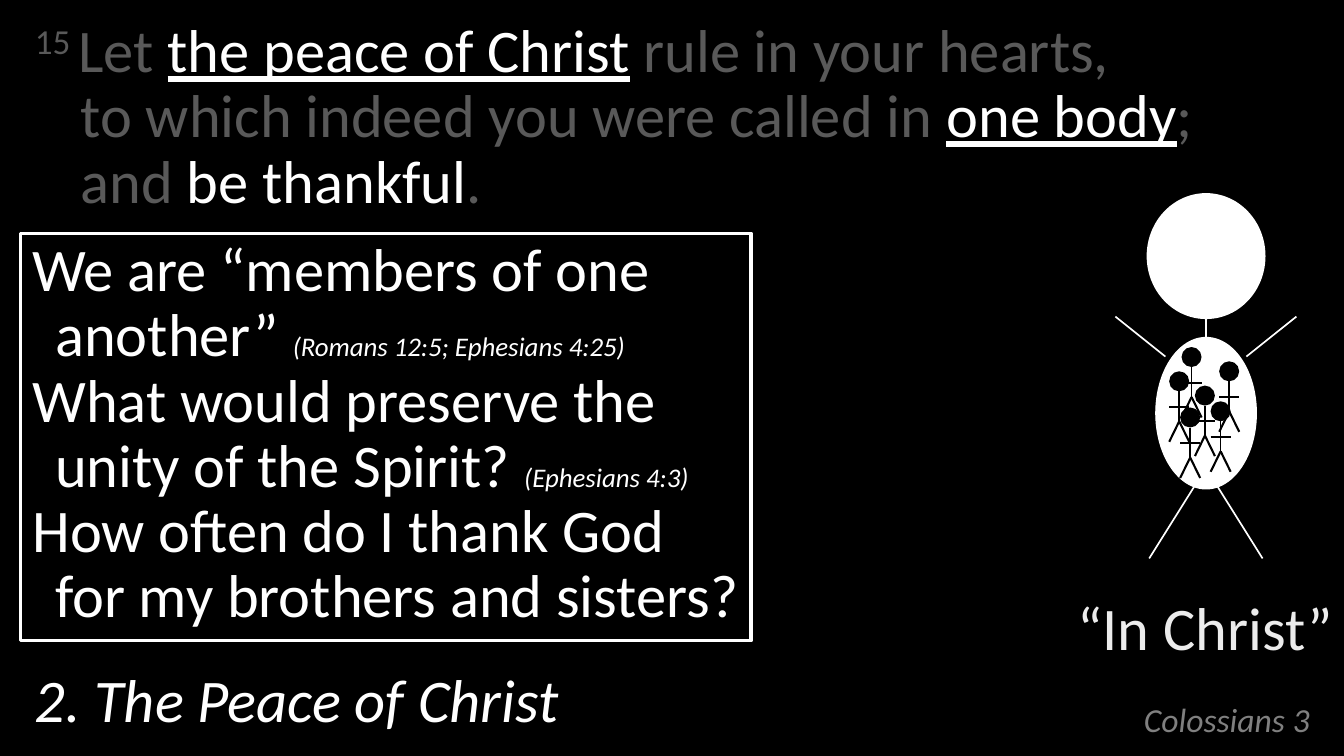
from dataclasses import dataclass
from lxml.etree import SubElement
from pptx import Presentation
from pptx.dml.color import RGBColor as RGB
from pptx.enum.shapes import MSO_CONNECTOR as CONN, MSO_SHAPE as SHAPE
from pptx.enum.text import MSO_ANCHOR as ANCHOR, MSO_AUTO_SIZE as FIT, PP_ALIGN as ALIGN
from pptx.oxml.ns import qn
from pptx.util import Cm, Pt


@dataclass(frozen=True)
class Theme:
    font: str = "Calibri"
    black: str = "000000"
    white: str = "FFFFFF"
    dim: str = "595959"
    grey: str = "808080"
    soft: str = "ECECEC"
    large: int = 36
    footer: int = 20
    cite: int = 16


T = Theme()
DIM = {"color": T.dim}
KEY = {"underline": True}
CITE = {"size": T.cite, "italic": True}

REFERENCE = [[("Colossians 3", {"size": T.footer, "color": T.grey, "italic": True})]]
VERSE = [[
    ("15 ", {"color": T.dim, "raised": True}),
    ("Let ", DIM),
    ("the peace of Christ", KEY),
    (" rule in your hearts,\nto which indeed you were called in ", DIM),
    ("one body", KEY),
    ("; \nand ", DIM),
    ("be thankful", {}),
    (".", DIM),
]]
HEADING = [[("2. The Peace of Christ", {"italic": True})]]
CAPTION = [[("“In Christ”", {"color": T.soft})]]
QUESTIONS = [
    [("We are “members of one another” ", {}), ("(Romans 12:5; Ephesians 4:25)", CITE)],
    [("What would preserve the unity of the Spirit? ", {}), ("(Ephesians 4:3)", CITE)],
    [("How often do I thank God for my brothers and sisters?", {})],
]

BODY_X = 25.32
MEMBERS = [(25.3, 8.1), (25.81, 7.59), (24.76, 7.8), (25.63, 8.43), (24.99, 8.56), (25.02, 7.29)]


def add_run(p, text, size=T.large, color=T.white, italic=False, underline=False, raised=False):
    for i, part in enumerate(text.split("\n")):
        if i:
            p.add_line_break()
        r = p.add_run()
        r.text = part
        r.font.name, r.font.size = T.font, Pt(size)
        r.font.color.rgb = RGB.from_string(color)
        r.font.italic, r.font.underline = italic, underline
        if raised:
            r._r.get_or_add_rPr().set("baseline", "30000")


def write(sp, paragraphs, indent=0, spacing=1.0, align=ALIGN.LEFT, anchor=ANCHOR.TOP):
    tf = sp.text_frame
    tf.word_wrap, tf.auto_size, tf.vertical_anchor = True, FIT.NONE, anchor
    for i, runs in enumerate(paragraphs):
        p = tf.add_paragraph() if i else tf.paragraphs[0]
        pPr = p._p.get_or_add_pPr()
        pPr.set("marL", str(Cm(indent)))
        pPr.set("indent", str(-Cm(indent)))
        SubElement(pPr, qn("a:buNone"))
        p.alignment, p.line_spacing, p.space_before = align, spacing, Pt(0)
        for text, style in runs:
            add_run(p, text, **style)


def place(sp, left, top, width, height):
    sp.left, sp.top, sp.width, sp.height = Cm(left), Cm(top), Cm(width), Cm(height)
    return sp


def add_shape(shapes, kind, box, fill, line=None, weight=1):
    sp = shapes.add_shape(kind, *map(Cm, box))
    sp.shadow.inherit = False
    sp.fill.solid()
    sp.fill.fore_color.rgb = RGB.from_string(fill)
    if line:
        sp.line.color.rgb = RGB.from_string(line)
        sp.line.width = Pt(weight)
    else:
        sp.line.fill.background()
    return sp


def add_line(shapes, x1, y1, x2, y2, color, weight=1):
    c = shapes.add_connector(CONN.STRAIGHT, Cm(x1), Cm(y1), Cm(x2), Cm(y2))
    c.line.color.rgb = RGB.from_string(color)
    c.line.width = Pt(weight)
    SubElement(c._element.spPr, qn("a:effectLst"))


def add_christ(shapes, x):
    add_shape(shapes, SHAPE.OVAL, (x - 1.19, 4.11, 2.39, 2.54), T.white, T.white, 3)
    add_line(shapes, x, 6.65, x, 9.83, T.white)
    for side in (1, -1):
        add_line(shapes, x, 9.83, x + side * 1.19, 11.73, T.white)
        add_line(shapes, x + side * 1.9, 6.65, x + side * 0.85, 7.49, T.white)
    add_shape(shapes, SHAPE.OVAL, (x - 1.05, 7.09, 2.11, 3.18), T.white, T.white, 0.75)


def add_member(shapes, x, y):
    half, hip = 0.21, y + 1.05
    add_shape(shapes, SHAPE.OVAL, (x - half, y, 2 * half, 2 * half), T.black)
    add_line(shapes, x, y + 2 * half, x, hip, T.black)
    for side in (1, -1):
        add_line(shapes, x, hip, x + side * half, y + 1.48, T.black, 1.25)
    add_line(shapes, x - half, y + 0.75, x + half, y + 0.75, T.black)


def main():
    prs = Presentation()
    prs.slide_width, prs.slide_height = Cm(28.22), Cm(15.88)
    s = prs.slides.add_slide(prs.slide_layouts[3])
    s.background.fill.solid()
    s.background.fill.fore_color.rgb = RGB.from_string(T.black)

    title, verse, heading = s.placeholders
    write(place(title, 17.93, 14.12, 9.83, 1.52), REFERENCE,
          spacing=0.8, align=ALIGN.RIGHT, anchor=ANCHOR.BOTTOM)
    write(place(verse, 0.48, 0.3, 27.28, 13.44), VERSE, indent=0.96, spacing=0.9)
    write(place(heading, 0.48, 14.07, 20.62, 1.52), HEADING,
          indent=0.96, spacing=0.95, anchor=ANCHOR.BOTTOM)

    caption = s.shapes.add_textbox(Cm(22.35), Cm(12.27), Cm(5.92), Cm(1.8))
    write(caption, CAPTION, align=ALIGN.CENTER)

    add_christ(s.shapes.add_group_shape().shapes, BODY_X)
    for x, y in MEMBERS:
        add_member(s.shapes.add_group_shape().shapes, x, y)

    box = add_shape(s.shapes, SHAPE.ROUNDED_RECTANGLE, (0.43, 4.9, 15.34, 8.56),
                    T.black, T.white, 2)
    box.adjustments[0] = 0
    write(box, QUESTIONS, indent=0.48, spacing=0.9)

    prs.save("out.pptx")


if __name__ == "__main__":
    main()
